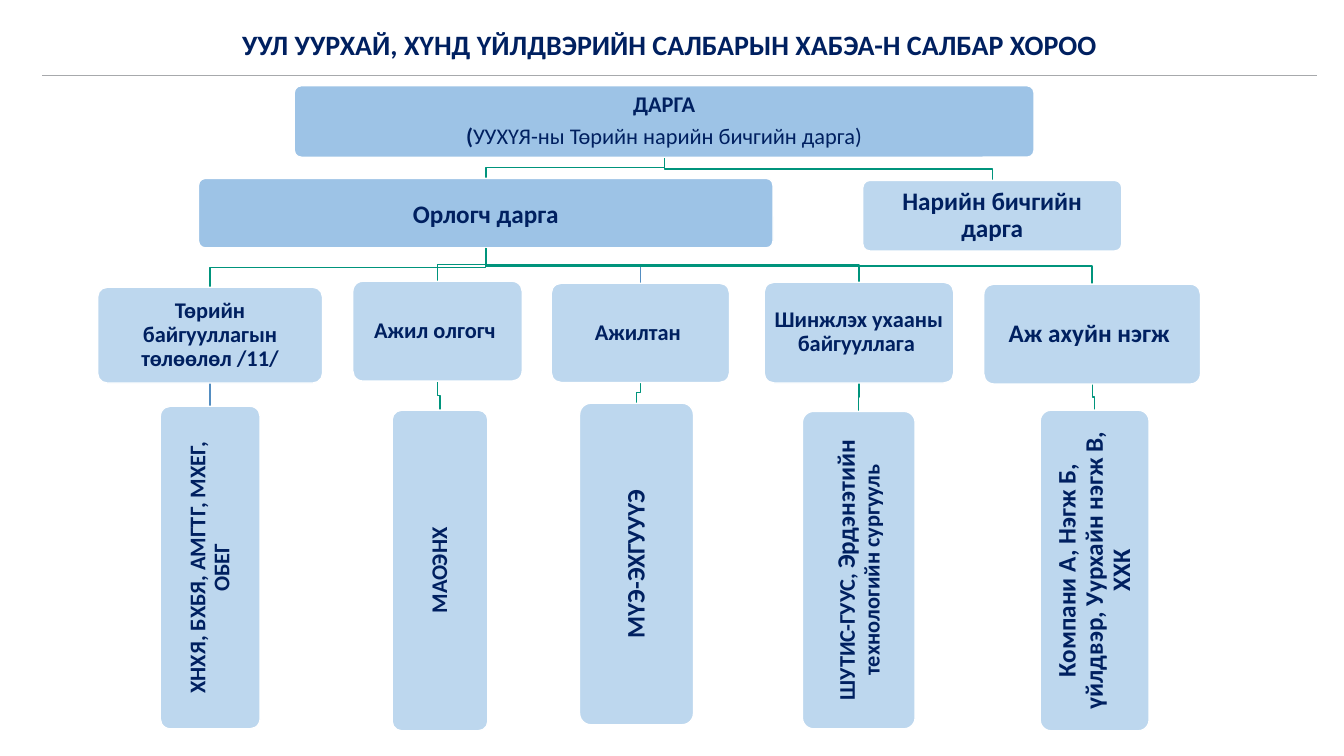
from lxml.etree import SubElement
from pptx import Presentation
from pptx.dml.color import RGBColor
from pptx.enum.shapes import MSO_CONNECTOR, MSO_SHAPE
from pptx.enum.text import MSO_ANCHOR, PP_ALIGN
from pptx.oxml.ns import qn
from pptx.util import Pt

NAVY = RGBColor(0x00, 0x20, 0x60)
MID_BLUE = RGBColor(0x9D, 0xC3, 0xE6)
LIGHT_BLUE = RGBColor(0xBD, 0xD7, 0xEE)
WHITE = RGBColor(0xFF, 0xFF, 0xFF)
GREEN = RGBColor(0x00, 0x94, 0x7C)
STEEL = RGBColor(0x53, 0x8D, 0xC1)
GREY = RGBColor(0xA7, 0xA9, 0xAC)

# Chart boxes: left, top, width, height
CHAIR_BOX = (210.2, 61.2, 528.5, 51.1)
DEPUTY_BOX = (141.8, 127.4, 410.4, 49.7)
SECRETARY_BOX = (616.3, 128.9, 185, 50.4)

# Each branch: group label, size, box, line colour; members as runs, box, line colour
BRANCHES = [
    ("Төрийн байгууллагын төлөөлөл /11/", 16, (69.8, 205.2, 160.6, 68.4), GREEN,
     [("ХНХЯ, БХБЯ, АМГТГ, МХЕГ, ОБЕГ", 16)], (114.5, 290.2, 71.3, 230.4), STEEL),
    ("Ажил олгогч ", 16, (252, 200.9, 121, 71.3), GREEN,
     [("МАОЭНХ", 16)], (280.1, 293, 68.4, 229), GREEN),
    ("Ажилтан ", 16, (393.8, 202.3, 127.4, 70.9), STEEL,
     [("МҮЭ-ЭХГУУҮЭ", 18)], (414, 288, 81.4, 229.7), GREEN),
    ("Шинжлэх ухааны байгууллага ", 16, (545.8, 201.6, 135.4, 72), GREEN,
     [("ШУТИС-ГУУС, ", 16), ("Эрдэнэтийн", 18), (" технологийн сургууль", 16)],
     (573.1, 293.8, 80.6, 226.8), GREEN),
    ("Аж ахуйн нэгж ", 18, (702.7, 203, 154.8, 71.3), GREEN,
     [("Компани А, Нэгж Б, үйлдвэр, Уурхайн нэгж В, ХХК", 18)],
     (743, 293, 77.8, 229), GREEN),
]


def write_text(paragraph, text, size=16, bold=True):
    run = paragraph.add_run()
    run.text = text
    run.font.name = "Calibri"
    run.font.size = Pt(size)
    run.font.bold = bold
    run.font.color.rgb = NAVY


def add_box(slide, box, paragraphs, fill=LIGHT_BLUE, spacing=0.9, vertical=False):
    """Rounded box; paragraphs is a list of lists of (text, size[, bold])."""
    shape = slide.shapes.add_shape(MSO_SHAPE.ROUNDED_RECTANGLE, *map(Pt, box))
    shape.adjustments[0] = 0.1
    shape.shadow.inherit = False
    shape.fill.solid()
    shape.fill.fore_color.rgb = fill
    shape.line.color.rgb = WHITE
    shape.line.width = Pt(1)

    frame = shape.text_frame
    frame.word_wrap = True
    frame.vertical_anchor = MSO_ANCHOR.MIDDLE
    frame.margin_left = frame.margin_right = Pt(5)
    frame.margin_top = frame.margin_bottom = Pt(5)
    if vertical:
        frame._txBody.bodyPr.set("vert", "vert270")
    for index, runs in enumerate(paragraphs):
        paragraph = frame.add_paragraph() if index else frame.paragraphs[0]
        paragraph.alignment = PP_ALIGN.CENTER
        paragraph.line_spacing = spacing
        paragraph.space_after = Pt(6)
        for run in runs:
            write_text(paragraph, *run)


def add_line(slide, kind, points, color, width):
    connector = slide.shapes.add_connector(kind, *map(Pt, points))
    connector.line.color.rgb = color
    connector.line.width = Pt(width)
    SubElement(connector._element.spPr, qn("a:effectLst"))
    return connector


def link(slide, parent, child, color=GREEN):
    """Elbow from the bottom centre of parent to the top centre of child."""
    start_x, start_y = parent[0] + parent[2] / 2, parent[1] + parent[3]
    end_x, end_y = child[0] + child[2] / 2, child[1]
    middle_x, middle_y = (start_x + end_x) / 2, (start_y + end_y) / 2
    half_run, half_drop = abs(end_x - start_x) / 2, (end_y - start_y) / 2
    # The elbow is laid out sideways, then turned a quarter towards the child
    side = 1 if end_x > start_x else -1
    points = (middle_x + side * half_drop, middle_y - half_run,
              middle_x - side * half_drop, middle_y + half_run)
    connector = add_line(slide, MSO_CONNECTOR.ELBOW, points, color, 1)
    turn = 270 if side == 1 else 90
    connector._element.spPr.find(qn("a:xfrm")).set("rot", str(turn * 60000))


def add_title(slide, box):
    title = slide.shapes.title
    title.left, title.top, title.width, title.height = map(Pt, box)
    title.text_frame.vertical_anchor = MSO_ANCHOR.MIDDLE
    paragraph = title.text_frame.paragraphs[0]
    paragraph.alignment = PP_ALIGN.CENTER
    paragraph.line_spacing = 0.8
    paragraph.space_before = Pt(4)
    properties = paragraph._p.get_or_add_pPr()
    properties.set("marL", str(Pt(28.8)))
    properties.set("indent", str(Pt(-20.2)))
    write_text(paragraph, "УУЛ УУРХАЙ, ХҮНД ҮЙЛДВЭРИЙН САЛБАРЫН ХАБЭА-Н САЛБАР ХОРОО", size=20)
    # Rule under the title
    add_line(slide, MSO_CONNECTOR.STRAIGHT, (30.2, 54, 941, 54), GREY, 0.5)


def add_leadership(slide, chair, deputy, secretary):
    link(slide, chair, deputy)
    link(slide, chair, secretary)
    add_box(slide, chair, [[("ДАРГА", 16)],
                           [("(", 16), ("УУХҮЯ-ны Төрийн нарийн бичгийн дарга)", 16, False)]],
            fill=MID_BLUE)
    add_box(slide, deputy, [[("Орлогч дарга", 18)]], fill=MID_BLUE, spacing=1.0)
    add_box(slide, secretary, [[("Нарийн бичгийн дарга", 18)]])


def add_branch(slide, parent, label, size, box, color, members, member_box, member_color):
    link(slide, parent, box, color)
    link(slide, box, member_box, member_color)
    add_box(slide, box, [[(label, size)]])
    add_box(slide, member_box, [members], vertical=True)


def main():
    presentation = Presentation()
    presentation.slide_width, presentation.slide_height = Pt(960), Pt(540)
    slide = presentation.slides.add_slide(presentation.slide_layouts[5])
    add_title(slide, (46, 15.8, 856, 36))
    add_leadership(slide, CHAIR_BOX, DEPUTY_BOX, SECRETARY_BOX)
    for branch in BRANCHES:
        add_branch(slide, DEPUTY_BOX, *branch)
    presentation.save("out.pptx")


if __name__ == "__main__":
    main()
